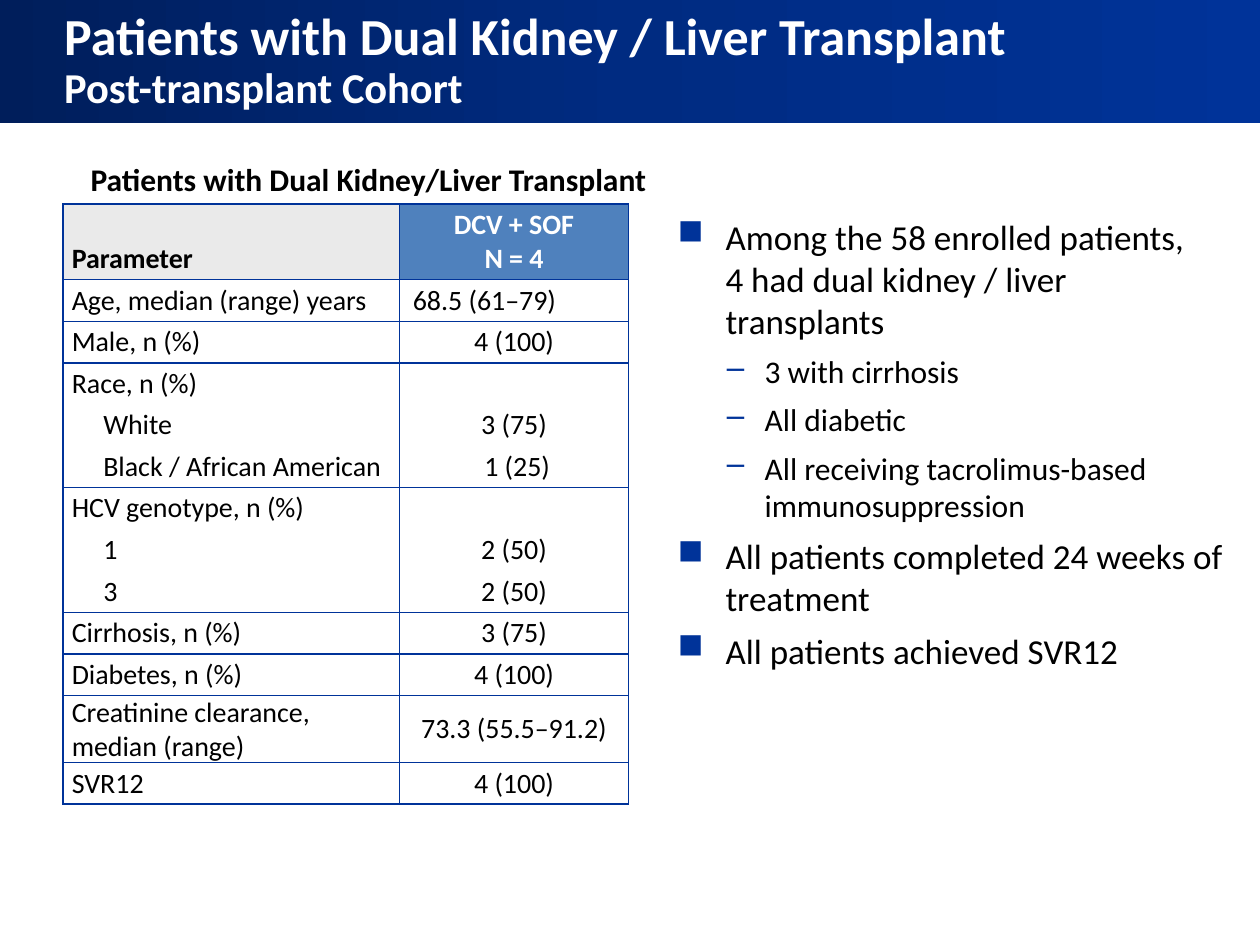
from copy import deepcopy
from dataclasses import dataclass

from lxml import etree
from pptx import Presentation
from pptx import util as u
from pptx.dml.color import RGBColor
from pptx.enum import shapes, text
from pptx.oxml.ns import qn


@dataclass(frozen=True)
class Theme:
    font: str = "Calibri"
    blue: str = "003399"
    band: tuple = ((0, "001E5B"), (0.5, "002B81"), (1, "003399"))
    header: str = "4F81BD"
    grey: str = "EAEAEA"
    white: str = "FFFFFF"
    black: str = "000000"
    title: float = 29.7
    subtitle: float = 24.3
    bullet: int = 20
    dash: int = 18
    caption: int = 18
    cell: int = 16


THEME = Theme()
LEFT, CENTER = text.PP_ALIGN.LEFT, text.PP_ALIGN.CENTER

# Rows in one group have no rule between them.
ROW_GROUPS = [
    [("Age, median (range) years", "68.5 (61–79)")],
    [("Male, n (%)", "4 (100)")],
    [("Race, n (%)", ""), ("White", "3 (75)"), ("Black / African American", " 1 (25)")],
    [("HCV genotype, n (%)", ""), ("1", "2 (50)"), ("3", "2 (50)")],
    [("Cirrhosis, n (%)", "3 (75)")],
    [("Diabetes, n (%)", "4 (100)")],
    [("Creatinine clearance, median (range)", "73.3 (55.5–91.2)")],
    [("SVR12", "4 (100)")],
]

POINTS = [
    ("■", "Among the 58 enrolled patients,\v4 had dual kidney / liver transplants"),
    ("–", "3 with cirrhosis"),
    ("–", "All diabetic"),
    ("–", "All receiving tacrolimus-based immunosuppression"),
    ("■", "All patients completed 24 weeks of treatment"),
    ("■", "All patients achieved SVR12"),
]


def write(para, words, size, color=THEME.black, bold=False, align=LEFT,
          before=0, after=0, indent=0):
    """Add words to a paragraph; a vertical tab breaks the line."""
    para.alignment = align
    para.space_before, para.space_after = u.Pt(before), u.Pt(after)
    if indent:
        para._p.get_or_add_pPr().set("marL", str(u.Inches(indent)))
    for number, line in enumerate(words.split("\v")):
        if number:
            para.add_line_break()
        span = para.add_run()
        span.text = line
        span.font.name, span.font.size, span.font.bold = THEME.font, u.Pt(size), bold
        span.font.color.rgb = RGBColor.from_string(color)


def add_bullet(para, mark, hang):
    props = para._p.get_or_add_pPr()
    props.set("indent", str(-u.Inches(hang)))
    color = etree.SubElement(props, qn("a:buClr"))
    etree.SubElement(color, qn("a:srgbClr"), val=THEME.blue)
    etree.SubElement(props, qn("a:buChar"), char=mark)


def next_para(frame, number):
    return frame.add_paragraph() if number else frame.paragraphs[0]


def add_box(slide, left, top, width, height, wrap=True):
    box = slide.shapes.add_textbox(*map(u.Inches, (left, top, width, height)))
    box.text_frame.word_wrap = wrap
    return box.text_frame


def add_title_band(slide):
    band = slide.shapes.add_shape(
        shapes.MSO_SHAPE.RECTANGLE, 0, 0, u.Inches(10), u.Inches(0.98))
    band.shadow.inherit = False
    band.line.fill.background()
    band.fill.gradient()
    band.fill.gradient_angle = 0
    stop_list = band._element.spPr.find(".//" + qn("a:gsLst"))
    stop_list.append(deepcopy(stop_list[0]))
    for stop, (position, color) in zip(band.fill.gradient_stops, THEME.band):
        stop.position = position
        stop.color.rgb = RGBColor.from_string(color)

    frame = band.text_frame
    frame.word_wrap = True
    frame.vertical_anchor = text.MSO_ANCHOR.MIDDLE
    frame.margin_left, frame.margin_right = u.Inches(0.51), u.Inches(0.43)
    para = frame.paragraphs[0]
    para.line_spacing = 0.9
    write(para, "Patients with Dual Kidney / Liver Transplant\v", THEME.title,
          color=THEME.white, bold=True)
    write(para, "Post-transplant Cohort", THEME.subtitle, color=THEME.white, bold=True)


def add_points(slide):
    frame = add_box(slide, 5.28, 1.66, 4.61, 4.01)
    for number, (mark, words) in enumerate(POINTS):
        main_point = mark == "■"
        para = next_para(frame, number)
        write(para, words, THEME.bullet if main_point else THEME.dash,
              after=6, indent=0.38 if main_point else 0.69)
        add_bullet(para, mark, 0.38 if main_point else 0.3)


def set_borders(cell, top=True, bottom=True):
    props = cell._tc.get_or_add_tcPr()
    sides = {"L": True, "R": True, "T": top, "B": bottom}
    for place, (side, drawn) in enumerate(sides.items()):
        line = etree.Element(qn("a:ln" + side), w=str(u.Pt(1)))
        if drawn:
            fill = etree.SubElement(line, qn("a:solidFill"))
            etree.SubElement(fill, qn("a:srgbClr"), val=THEME.blue)
        else:
            etree.SubElement(line, qn("a:noFill"))
        props.insert(place, line)


def format_cell(cell, fill, top=True, bottom=True, foot=0.0,
                anchor=text.MSO_ANCHOR.MIDDLE):
    cell.margin_left = cell.margin_right = u.Inches(0.07)
    cell.margin_top, cell.margin_bottom = 0, u.Inches(foot)
    cell.vertical_anchor = anchor
    if fill:
        cell.fill.solid()
        cell.fill.fore_color.rgb = RGBColor.from_string(fill)
    else:
        cell.fill.background()
    set_borders(cell, top, bottom)


def fill_header(label, value):
    for cell, fill in ((label, THEME.grey), (value, THEME.header)):
        format_cell(cell, fill, foot=0.03, anchor=text.MSO_ANCHOR.BOTTOM)
    write(label.text_frame.paragraphs[0], "Parameter", THEME.cell, bold=True,
          before=3, after=3)
    for number, words in enumerate(("DCV + SOF", "N = 4")):
        write(next_para(value.text_frame, number), words, THEME.cell,
              color=THEME.white, bold=True, align=CENTER)


def add_patient_table(slide):
    row_count = 1 + sum(map(len, ROW_GROUPS))
    table = slide.shapes.add_table(
        row_count, 2, *map(u.Inches, (0.5, 1.62, 4.5, 4.56))).table
    table.first_row = table.horz_banding = False
    for column, width in zip(table.columns, (2.67, 1.82)):
        column.width = u.Inches(width)
    for number, row in enumerate(table.rows):
        row.height = u.Inches(0.33 if number else 0.6)

    fill_header(table.cell(0, 0), table.cell(0, 1))
    number = 0
    for group in ROW_GROUPS:
        for place, (name, amount) in enumerate(group):
            number += 1
            label, value = table.cell(number, 0), table.cell(number, 1)
            for cell, fill in ((label, THEME.white), (value, None)):
                format_cell(cell, fill, top=place == 0, bottom=place == len(group) - 1)
            write(label.text_frame.paragraphs[0], name, THEME.cell,
                  indent=0.25 if place else 0)
            if amount:
                write(value.text_frame.paragraphs[0], amount, THEME.cell, align=CENTER)
    table.cell(1, 1).margin_right = u.Inches(0.54)  # the age sits left of centre


def main():
    deck = Presentation()
    deck.slide_width, deck.slide_height = u.Inches(10), u.Inches(7.5)
    slide = deck.slides.add_slide(deck.slide_layouts[6])
    add_title_band(slide)
    add_points(slide)
    caption = add_box(slide, 0.62, 1.22, 4.65, 0.4, wrap=False)
    write(caption.paragraphs[0], "Patients with Dual Kidney/Liver Transplant",
          THEME.caption, bold=True)
    add_patient_table(slide)
    deck.save("out.pptx")


if __name__ == "__main__":
    main()
